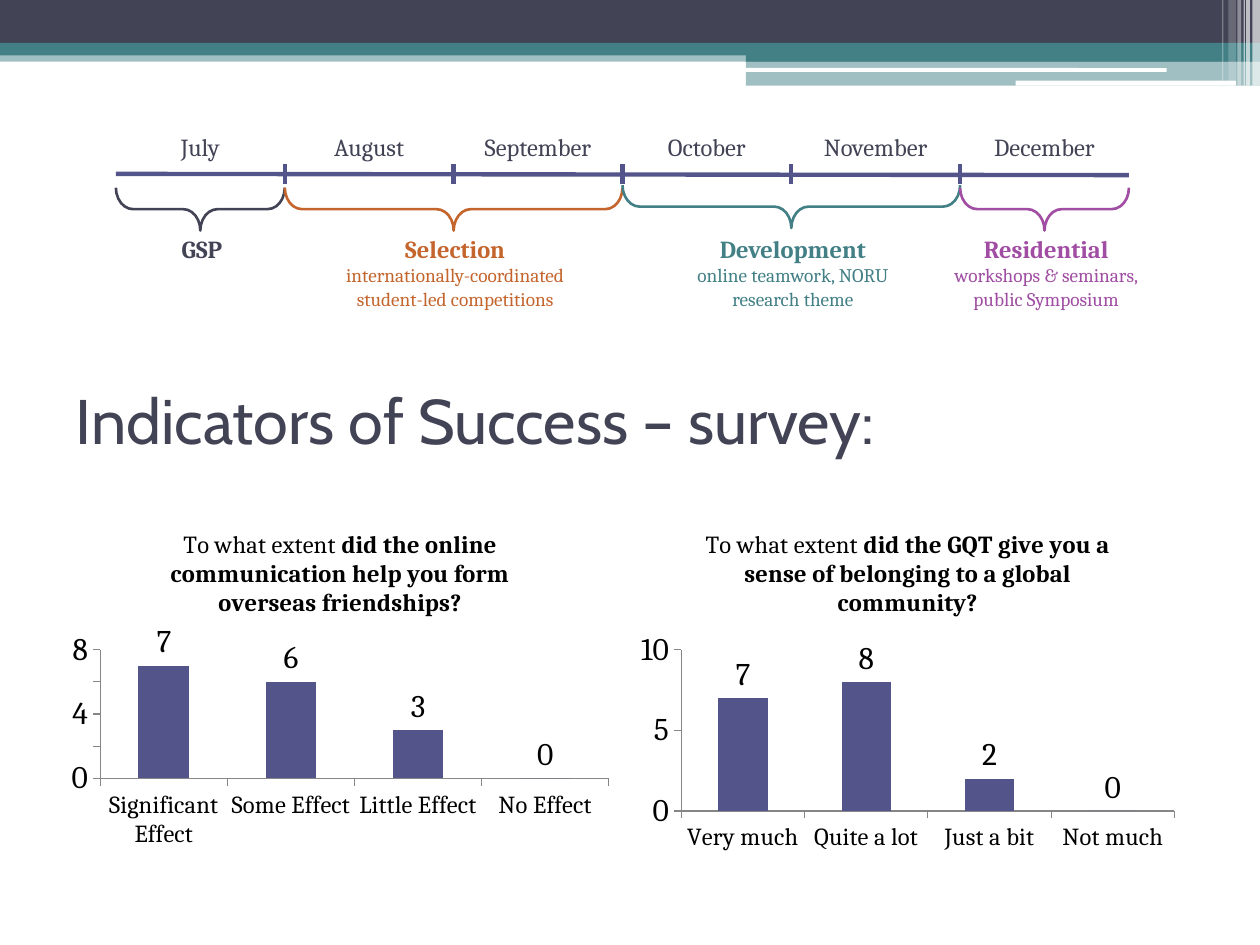
from dataclasses import dataclass

from lxml import etree
from pptx import Presentation
from pptx.chart.data import CategoryChartData
from pptx.dml.color import RGBColor
from pptx.enum.chart import XL_CHART_TYPE, XL_LABEL_POSITION, XL_TICK_MARK
from pptx.enum.shapes import MSO_CONNECTOR, MSO_SHAPE
from pptx.enum.text import MSO_ANCHOR, PP_ALIGN
from pptx.oxml.ns import qn
from pptx.util import Inches, Pt

RECTANGLE, ROUNDED = MSO_SHAPE.RECTANGLE, MSO_SHAPE.ROUNDED_RECTANGLE
BRACE = MSO_SHAPE.RIGHT_BRACE
STRAIGHT = MSO_CONNECTOR.STRAIGHT
CENTER, LEFT = PP_ALIGN.CENTER, PP_ALIGN.LEFT
MIDDLE = MSO_ANCHOR.MIDDLE
COLUMN = XL_CHART_TYPE.COLUMN_CLUSTERED
OUTSIDE_END = XL_LABEL_POSITION.OUTSIDE_END
TICK_OUTSIDE = XL_TICK_MARK.OUTSIDE


@dataclass(frozen=True)
class Theme:
    dark: str = "424456"
    teal: str = "438086"
    orange: str = "C4652D"
    purple: str = "A04DA3"
    indigo: str = "53548A"
    white: str = "FFFFFF"
    black: str = "000000"
    gray: str = "868686"
    heading_font: str = "Cabin"
    body_font: str = "Cambria"
    heading: int = 36
    chart: int = 18
    label: int = 14
    detail: int = 11


THEME = Theme()


@dataclass(frozen=True)
class Grid:
    """A box in inches, divided into columns and rows."""
    left: float
    top: float
    width: float
    height: float
    columns: int
    rows: int

    def place(self, column, row, wide, high):
        across, down = self.width / self.columns, self.height / self.rows
        return (Inches(self.left + column * across), Inches(self.top + row * down),
                Inches(wide * across), Inches(high * down))

    def point(self, column, row):
        return self.place(column, row, 0, 0)[:2]


def format_font(font, color, **values):
    for name, value in values.items():
        setattr(font, name, value)
    font.color.rgb = RGBColor.from_string(color)


def add_bar(slide, box, color, opacity=100, kind=RECTANGLE):
    shape = slide.shapes.add_shape(kind, *box)
    shape.shadow.inherit = False
    shape.line.fill.background()
    shape.fill.solid()
    shape.fill.fore_color.rgb = RGBColor.from_string(color)
    if opacity < 100:
        color_node = shape.fill._xPr.find(".//" + qn("a:srgbClr"))
        etree.SubElement(color_node, qn("a:alpha"), val=str(opacity * 1000))


def add_line(slide, start, end):
    line = slide.shapes.add_connector(STRAIGHT, *start, *end)
    line.line.width = Pt(2.5)
    line.line.color.rgb = RGBColor.from_string(THEME.indigo)
    etree.SubElement(line._element.spPr, qn("a:effectLst"))


def add_label(slide, box, color, lines):
    """Centred text; each line is (text, size, bold)."""
    frame = slide.shapes.add_textbox(*box).text_frame
    frame.word_wrap = True
    for index, (text, size, bold) in enumerate(lines):
        paragraph = frame.add_paragraph() if index else frame.paragraphs[0]
        paragraph.alignment = CENTER
        run = paragraph.add_run()
        run.text = text
        format_font(run.font, color, name=THEME.body_font, size=Pt(size), bold=bold)


def add_header(slide, grid):
    # Full-width bands, then the stepped block on the right
    for column, row, wide, high, color, opacity in (
            (0, 40, 100, 9, THEME.teal, 50),
            (0, 0, 100, 34, THEME.dark, 100),
            (0, 34, 100, 10, THEME.teal, 100),
            (59.2, 39, 40.8, 10, THEME.teal, 100),
            (59.2, 48, 40.8, 20, THEME.teal, 50)):
        add_bar(slide, grid.place(column, row, wide, high), color, opacity)
    # White slots
    for slot in ((59.1, 54, 33.5, 3), (80.6, 64, 17.5, 4)):
        add_bar(slide, grid.place(*slot), THEME.white, kind=ROUNDED)
    # Translucent stripes at the right edge
    for column, wide, high, opacity in (
            (99.4, 0.6, 68, 65), (98.9, 0.3, 68, 65), (98.7, 0.1, 68, 60),
            (98.2, 0.3, 68, 40), (97.5, 0.6, 64, 20), (97, 0.1, 64, 30)):
        add_bar(slide, grid.place(column, 0, wide, high), THEME.white, opacity)


def add_phase(slide, grid, start, months, row, color, width, name, detail):
    # The brace is drawn upright around its centre and then turned
    left, top, wide, high = grid.place(start, row, months, 3.4)
    brace = slide.shapes.add_shape(
        BRACE, left + (wide - high) // 2, top + (high - wide) // 2, high, wide)
    brace.rotation = 90
    brace.adjustments[0] = 0.4
    brace.shadow.inherit = False
    brace.fill.background()
    brace.line.width = Pt(1.5)
    brace.line.color.rgb = RGBColor.from_string(color)
    # Phase name with its detail below
    lines = [(name, THEME.label, True)]
    if detail:
        lines.append((detail, THEME.detail, False))
    center = start + months / 2 + 0.01
    add_label(slide, grid.place(center - width / 2, 8.1, width, 7.1), color, lines)


def add_timeline(slide, grid):
    months = ("July", "August", "September", "October", "November", "December")
    add_line(slide, grid.point(0, 3.8), grid.point(len(months), 3.9))
    for column, month in enumerate(months):
        if column:
            add_line(slide, grid.point(column, 3.05), grid.point(column, 4.6))
        add_label(slide, grid.place(column, 0, 1, 3.4), THEME.dark,
                  [(month, THEME.label, False)])
    for phase in (
            (0, 1, 4.9, THEME.dark, 1, "GSP", ""),
            (1, 2, 4.9, THEME.orange, 1.63, "Selection",
             "internationally-coordinated student-led competitions"),
            (3, 2, 4.7, THEME.teal, 1.32, "Development",
             "online teamwork, NORU research theme"),
            (5, 1, 4.9, THEME.purple, 1.41, "Residential",
             "workshops & seminars, public Symposium")):
        add_phase(slide, grid, *phase)


def add_heading(slide, box, text):
    title = slide.shapes.title
    title.left, title.top, title.width, title.height = box
    frame = title.text_frame
    frame.text = text
    frame.vertical_anchor = MIDDLE
    frame.paragraphs[0].alignment = LEFT
    format_font(frame.paragraphs[0].runs[0].font, THEME.dark,
                name=THEME.heading_font, size=Pt(THEME.heading))


def add_survey_chart(slide, box, question, answers, maximum, step):
    data = CategoryChartData()
    data.categories = list(answers)
    data.add_series("Series 1", list(answers.values()))
    chart = slide.shapes.add_chart(COLUMN, *box, data).chart
    chart.has_legend = False
    format_font(chart.font, THEME.black, name=THEME.body_font, size=Pt(THEME.chart))

    # Question, with its main part in bold
    paragraph = chart.chart_title.text_frame.paragraphs[0]
    for text, bold in (("To what extent ", False), (question, True)):
        run = paragraph.add_run()
        run.text = text
        format_font(run.font, THEME.black, name=THEME.body_font,
                    size=Pt(THEME.label), bold=bold)

    # Axes
    for axis in (chart.category_axis, chart.value_axis):
        axis.has_major_gridlines = False
        axis.major_tick_mark = TICK_OUTSIDE
        axis.format.line.color.rgb = RGBColor.from_string(THEME.gray)
    chart.category_axis.tick_labels.font.size = Pt(THEME.label)
    for name, value in {"minimum_scale": 0, "maximum_scale": maximum,
                        "major_unit": step}.items():
        setattr(chart.value_axis, name, value)

    # Columns and their values
    plot = chart.plots[0]
    plot.vary_by_categories = False
    plot.gap_width = 150
    plot.has_data_labels = True
    plot.data_labels.show_value = True
    plot.data_labels.position = OUTSIDE_END
    fill = plot.series[0].format.fill
    fill.solid()
    fill.fore_color.rgb = RGBColor.from_string(THEME.indigo)


def main():
    presentation = Presentation()
    presentation.slide_width, presentation.slide_height = Inches(10), Inches(7.5)
    slide = presentation.slides.add_slide(presentation.slide_layouts[5])
    page = Grid(0, 0, 10, 7.5, 100, 75)

    add_header(slide, Grid(0, 0, 10, 1, 100, 100))
    add_timeline(slide, Grid(0.92, 1, 8.04, 1.5, 6, 15))
    add_heading(slide, page.place(5, 27.4, 90, 11.7), "Indicators of Success – survey:")
    add_survey_chart(
        slide, page.place(4.8, 40.6, 44.4, 27.3),
        "did the online communication help you form overseas friendships?",
        {"Significant Effect": 7, "Some Effect": 6, "Little Effect": 3, "No Effect": 0}, 8, 2)
    add_survey_chart(
        slide, page.place(50, 40.6, 44.1, 27.6),
        "did the GQT give you a sense of belonging to a global community?",
        {"Very much": 7, "Quite a lot": 8, "Just a bit": 2, "Not much": 0}, 10, 5)
    presentation.save("out.pptx")


if __name__ == "__main__":
    main()
